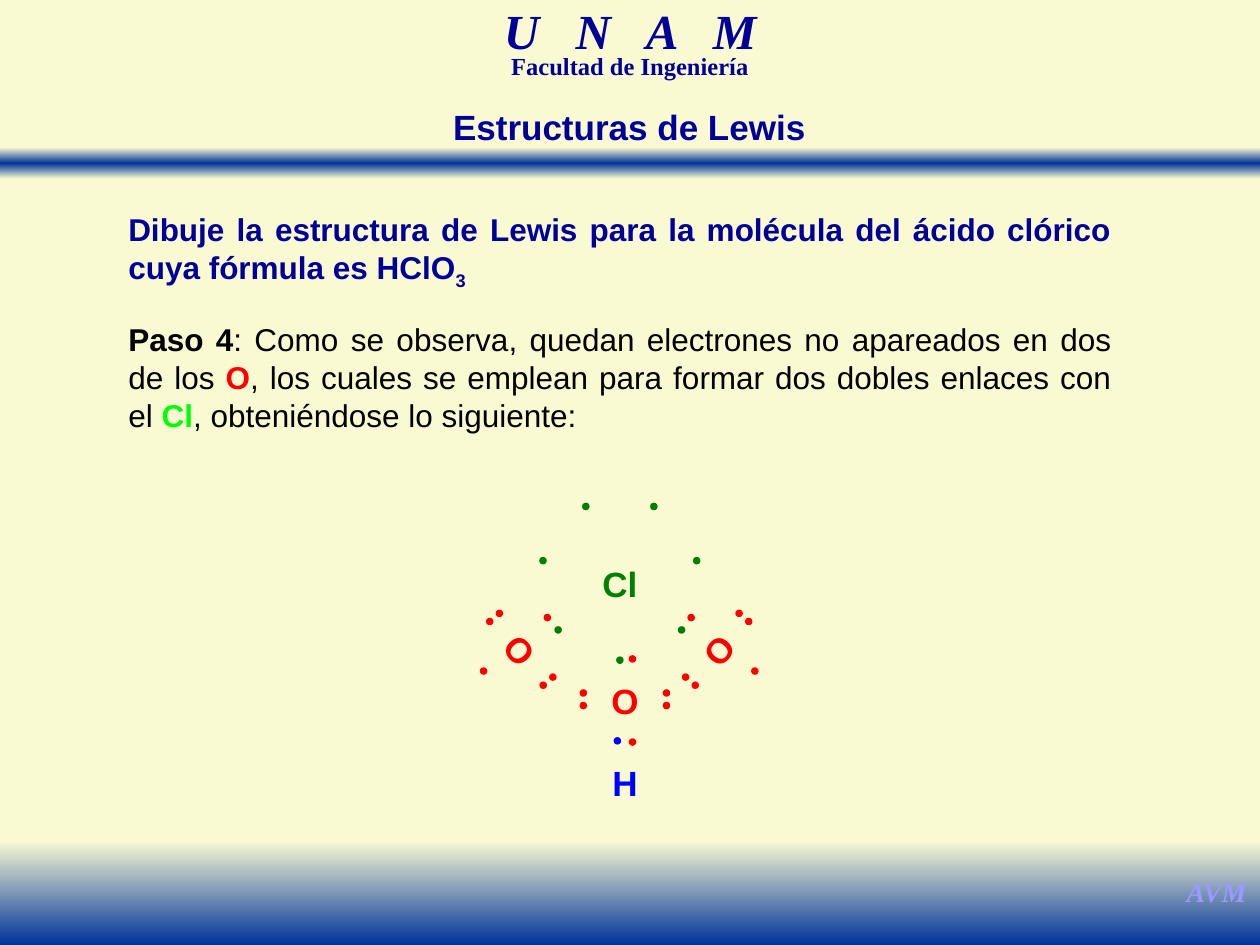
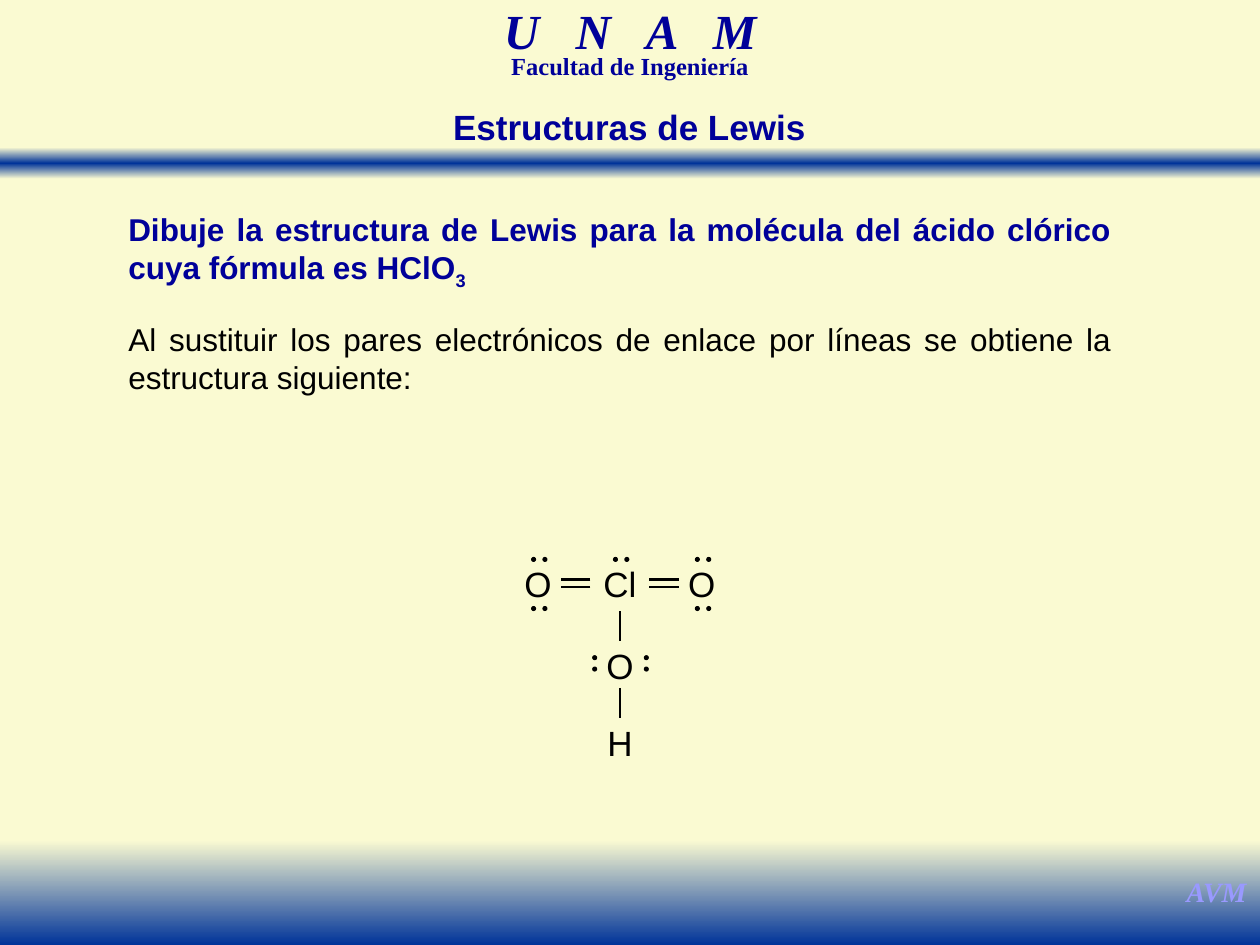
from dataclasses import dataclass, replace
from itertools import product
from math import cos, radians, sin

from lxml.etree import SubElement
from pptx import Presentation
from pptx.dml.color import RGBColor
from pptx.enum.shapes import MSO_CONNECTOR, MSO_SHAPE
from pptx.enum.text import MSO_ANCHOR, MSO_AUTO_SIZE, PP_ALIGN
from pptx.oxml.ns import qn
from pptx.util import Inches, Pt


@dataclass(frozen=True)
class Style:
    size: int
    color: str
    font: str = "Arial"
    bold: bool = False
    italic: bool = False
    baseline: int = 0
    tracking: int = 0


@dataclass(frozen=True)
class Theme:
    cream: str = "FAFAD2"
    band: str = "003399"
    navy: str = "000099"
    lilac: str = "9999FF"
    black: str = "000000"
    red: str = "FF0000"
    lime: str = "00FF00"
    green: str = "008000"
    blue: str = "0000FF"
    serif: str = "Times New Roman"
    school_size: int = 28
    faculty_size: int = 14
    author_size: int = 16
    title_size: int = 20
    body_size: int = 18
    atom_size: int = 20
    bond_width: float = 1.5


@dataclass(frozen=True)
class Box:
    left: float
    top: float
    width: float
    height: float

    @property
    def middle(self):
        return self.left + self.width / 2

    def lengths(self):
        return [Inches(n) for n in (self.left, self.top, self.width, self.height)]


THEME = Theme()
TITLE = Style(THEME.title_size, THEME.navy, bold=True)
BODY = Style(THEME.body_size, THEME.black)
STRONG = replace(BODY, bold=True)
QUESTION = replace(STRONG, color=THEME.navy)
SCHOOL = Style(THEME.school_size, THEME.navy, THEME.serif, bold=True, italic=True)
FACULTY = Style(THEME.faculty_size, THEME.navy, THEME.serif, bold=True)
AUTHOR = Style(THEME.author_size, THEME.lilac, THEME.serif, bold=True, italic=True)

ATOM_SIDE = 0.59
DOT, SMALL_DOT = 0.06, 0.04


def centred_box(x, y, side):
    return Box(x - side / 2, y - side / 2, side, side)


def write(frame, spans, align, wrap=True, line_spacing=None):
    frame.word_wrap = wrap
    para = frame.paragraphs[0]
    para.alignment = align
    if line_spacing:
        para.line_spacing = line_spacing
    for text, style in spans:
        span = para.add_run()
        span.text = text
        font = span.font
        font.name, font.size = style.font, Pt(style.size)
        font.bold, font.italic = style.bold, style.italic
        font.color.rgb = RGBColor.from_string(style.color)
        props = span._r.get_or_add_rPr()
        if style.baseline:
            props.set("baseline", str(style.baseline * 1000))
        if style.tracking:
            props.set("spc", str(style.tracking * 100))


def add_text(shapes, box, spans, align=PP_ALIGN.CENTER, **options):
    label = shapes.add_textbox(*box.lengths())
    write(label.text_frame, spans, align, **options)
    return label


def add_band(page, box, colors):
    """Add a rectangle that fades downward through evenly spaced colours."""
    band = page.shapes.add_shape(MSO_SHAPE.RECTANGLE, *box.lengths())
    band.shadow.inherit = False
    band.line.fill.background()
    band.fill.gradient()
    band.fill.gradient_angle = 270
    stops = band._element.spPr.find(".//" + qn("a:gsLst"))
    stops.clear()
    for index, color in enumerate(colors):
        position = 100000 * index // (len(colors) - 1)
        stop = SubElement(stops, qn("a:gs"), pos=str(position))
        SubElement(stop, qn("a:srgbClr"), val=color)


def add_header(page, box):
    tracked = replace(SCHOOL, tracking=7)
    add_text(page.shapes, Box(box.middle - 1.96, box.top + 0.08, 3.92, 0.43),
             [("U N A ", tracked), ("M", SCHOOL)], line_spacing=0.7)
    add_text(page.shapes, Box(box.middle - 1.79, box.top + 0.42, 3.58, 0.26),
             [("Facultad de Ingeniería", FACULTY)], line_spacing=0.7)
    add_band(page, Box(box.left, box.top + 1.17, box.width, 0.25),
             [THEME.cream, THEME.band, THEME.cream])
    title = page.shapes.title
    title.left, title.top, title.width, title.height = Box(
        box.middle - 1.56, box.top + 0.79, 3.11, 0.44).lengths()
    frame = title.text_frame
    frame.auto_size = MSO_AUTO_SIZE.NONE
    frame.vertical_anchor = MSO_ANCHOR.TOP
    write(frame, [("Estructuras de Lewis", TITLE)], PP_ALIGN.CENTER, wrap=False)


def add_footer(page, box):
    add_band(page, box, [THEME.cream, THEME.band])
    add_text(page.shapes, Box(box.left + box.width - 0.69, box.top + 0.22, 0.69, 0.37),
             [("AVM", AUTHOR)], wrap=False)


def add_statement(page, box, explanation):
    question = [
        ("Dibuje la estructura de Lewis para la molécula del ácido clórico "
         "cuya fórmula es HClO", QUESTION),
        ("3", replace(QUESTION, baseline=-25)),
    ]
    add_text(page.shapes, Box(box.left, box.top, box.width, 0.7),
             question, PP_ALIGN.JUSTIFY)
    add_text(page.shapes, Box(box.left, box.top + 0.87, box.width, box.height - 0.87),
             explanation, PP_ALIGN.JUSTIFY)


def add_symbol(shapes, x, y, symbol, color, bold, turn=0):
    style = Style(THEME.atom_size, color, bold=bold)
    label = add_text(shapes, centred_box(x, y, ATOM_SIDE), [(symbol, style)], wrap=False)
    label.rotation = turn
    frame = label.text_frame
    frame.vertical_anchor = MSO_ANCHOR.MIDDLE
    frame.margin_left = frame.margin_right = frame.margin_top = frame.margin_bottom = 0


def add_atom(page, x, y, symbol, electrons, color=THEME.black, bold=False,
             dot=SMALL_DOT, turn=0):
    """Group a symbol with its electrons, given as offsets from its centre."""
    shapes = page.shapes.add_group_shape().shapes
    add_symbol(shapes, x, y, symbol, color, bold, turn)
    c, s = cos(radians(turn)), sin(radians(turn))
    for dx, dy in electrons:
        place = centred_box(x + dx * c - dy * s, y + dx * s + dy * c, dot)
        electron = shapes.add_shape(MSO_SHAPE.OVAL, *place.lengths())
        electron.shadow.inherit = False
        electron.fill.solid()
        electron.fill.fore_color.rgb = RGBColor.from_string(color)
        electron.line.fill.background()


def add_bond(page, x1, y1, x2, y2):
    bond = page.shapes.add_connector(
        MSO_CONNECTOR.STRAIGHT, *[Inches(n) for n in (x1, y1, x2, y2)])
    bond.line.color.rgb = RGBColor.from_string(THEME.black)
    bond.line.width = Pt(THEME.bond_width)
    SubElement(bond._element.spPr, qn("a:effectLst"))


def add_electron_structure(page, box):
    x, y = box.middle, box.top + 0.65
    look = {"bold": True, "dot": DOT}
    chlorine = [(0, 0.61)] + [
        (side * dx, dy) for dx, dy in ((0.49, 0.37), (0.61, -0.18), (0.27, -0.61))
        for side in (-1, 1)]
    add_atom(page, x, y, "Cl", chlorine, THEME.green, **look)
    # Each oxygen: centre, side of its bonding electrons, and turn.
    for dx, dy, side, turn in ((-0.79, 0.53, -1, 50), (0.04, 0.93, 1, 0),
                               (0.78, 0.53, 1, -50)):
        oxygen = [(side * 0.06, -0.33), (side * 0.06, 0.33),
                  *product((-0.33, 0.33), (-0.06, 0.04))]
        add_atom(page, x + dx, y + dy, "O", oxygen, THEME.red, turn=turn, **look)
    add_atom(page, x + 0.04, y + 1.58, "H", [(-0.06, -0.33)], THEME.blue, **look)


def add_line_structure(page, box):
    x, y = box.middle, box.top + 0.21
    half = 0.045
    above = [(-half + 0.01, -0.19), (half + 0.01, -0.19)]
    above_below = list(product((0.01 - half, 0.01 + half), (-0.19, 0.2)))
    beside = list(product((-0.2, 0.21), (-0.06, 0.03)))
    add_atom(page, x, y, "Cl", above)
    for side in (-1, 1):
        add_atom(page, x + side * 0.65, y, "O", above_below)
        for dy in (-0.03, 0.03):
            add_bond(page, x + side * 0.235, y + dy, x + side * 0.47, y + dy)
    add_atom(page, x, y + 0.65, "O", beside)
    add_atom(page, x, y + 1.26, "H", [])
    for dy in (0.22, 0.83):
        add_bond(page, x, y + dy, x, y + dy + 0.24)


def add_page(deck, explanation, statement_height):
    page = deck.slides.add_slide(deck.slide_layouts.get_by_name("Title Only"))
    add_header(page, Box(0, 0, 10, 1.42))
    add_footer(page, Box(0, 6.67, 10, 0.83))
    add_statement(page, Box(0.92, 1.62, 8, statement_height), explanation)
    return page


def main():
    deck = Presentation()
    deck.slide_width, deck.slide_height = Inches(10), Inches(7.5)
    backdrop = deck.slide_master.background.fill
    backdrop.solid()
    backdrop.fore_color.rgb = RGBColor.from_string(THEME.cream)

    step_four = [
        ("Paso 4", STRONG),
        (": Como se observa, quedan electrones no apareados en dos de los ", BODY),
        ("O", replace(STRONG, color=THEME.red)),
        (", los cuales se emplean para formar dos dobles enlaces con el ", BODY),
        ("Cl", replace(STRONG, color=THEME.lime)),
        (", obteniéndose lo siguiente:", BODY),
    ]
    page = add_page(deck, step_four, 1.88)
    add_electron_structure(page, Box(3.82, 3.98, 2.2, 2.54))

    substitution = [("Al sustituir los pares electrónicos de enlace por líneas "
                     "se obtiene la estructura siguiente:", BODY)]
    page = add_page(deck, substitution, 1.58)
    add_line_structure(page, Box(4.12, 4.42, 1.6, 1.77))

    deck.save("out.pptx")


if __name__ == "__main__":
    main()
